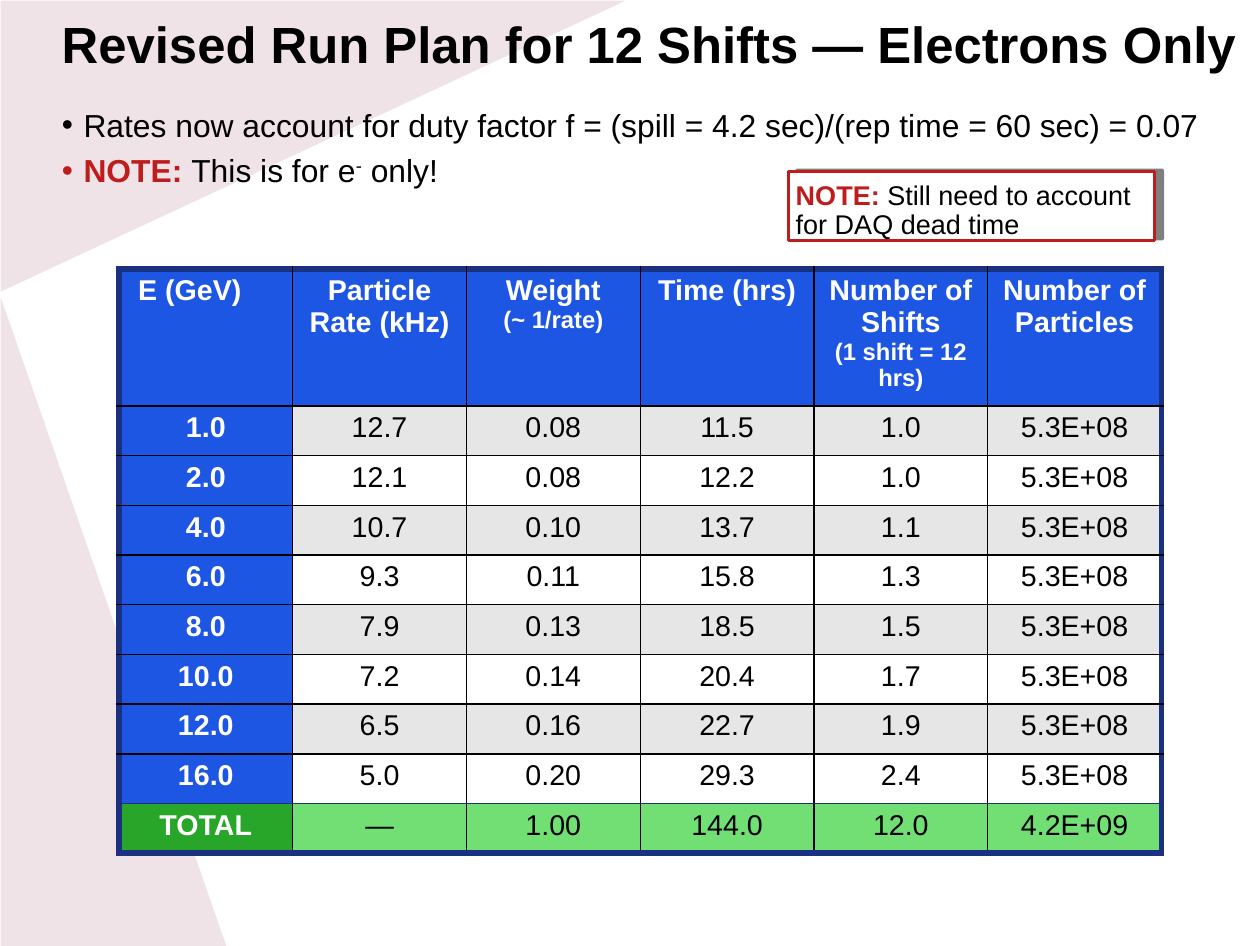
from lxml import etree
from pptx import Presentation
from pptx.dml.color import RGBColor
from pptx.enum.shapes import MSO_SHAPE
from pptx.enum.text import MSO_ANCHOR, PP_ALIGN
from pptx.oxml import parse_xml
from pptx.oxml.ns import nsdecls, qn
from pptx.util import Inches, Pt

COLORS = {
    "black": "000000", "white": "FFFFFF", "red": "BE1D1D", "mauve": "94476B",
    "blue": "1D56E3", "navy": "1A3080", "gray": "E6E6E6",
    "green": "27A629", "light green": "72DF74",
}


def add_run(p, text, size, color="black", bold=False):
    r = p.add_run()
    r.text = text
    r.font.name = "Arial"
    r.font.size = Pt(size)
    r.font.bold = bold
    r.font.color.rgb = RGBColor.from_string(COLORS[color])
    return r


def add_text_box(shapes, left, top, width, height):
    tf = shapes.add_textbox(Inches(left), Inches(top), Inches(width), Inches(height)).text_frame
    tf.word_wrap = True
    tf.margin_left = tf.margin_right = tf.margin_top = tf.margin_bottom = Inches(0.05)
    tf.paragraphs[0].line_spacing = 0.9
    return tf


prs = Presentation()
prs.slide_width, prs.slide_height = Inches(11.02), Inches(8.27)
s = prs.slides.add_slide(prs.slide_layouts[6])

# Translucent background triangles
for corners in ([(0, 2.56), (2, 8.31), (0, 8.31)], [(0, 2.56), (5.5, 0), (0, 0)]):
    points = [(Inches(x), Inches(y)) for x, y in corners]
    builder = s.shapes.build_freeform(*points[0])
    builder.add_line_segments(points[1:], close=True)
    sp = builder.convert_to_shape()
    sp.shadow.inherit = False
    sp.fill.solid()
    sp.fill.fore_color.rgb = RGBColor.from_string(COLORS["mauve"])
    fill_color = sp.fill._xPr.find(qn("a:solidFill"))[0]
    etree.SubElement(fill_color, qn("a:alpha"), val="15000")
    sp.line.color.rgb = RGBColor.from_string(COLORS["white"])
    sp.line.width = Pt(0.75)

# Title
tf = add_text_box(s.shapes, 0.49, 0.03, 12.34, 0.77)
tf.vertical_anchor = MSO_ANCHOR.MIDDLE
add_run(tf.paragraphs[0], "Revised Run Plan for 12 Shifts — Electrons Only", 32, bold=True)

# Bullets
tf = add_text_box(s.shapes, 0.49, 0.91, 10.31, 0.75)
rates, note = tf.paragraphs[0], tf.add_paragraph()
for p, color in ((rates, "black"), (note, "red")):
    p.line_spacing = 0.9
    p.space_before = Pt(7)
    pPr = p._p.get_or_add_pPr()
    pPr.set("marL", str(Inches(0.19)))
    pPr.set("indent", str(-Inches(0.19)))
    bullet_color = etree.SubElement(pPr, qn("a:buClr"))
    etree.SubElement(bullet_color, qn("a:srgbClr"), val=COLORS[color])
    etree.SubElement(pPr, qn("a:buFont"), typeface="Arial")
    etree.SubElement(pPr, qn("a:buChar"), char="•")
add_run(rates, "Rates now account for duty factor f = (spill = 4.2 sec)/(rep time = 60 sec) = 0.07", 20)
add_run(note, "NOTE: ", 20, "red", True)
add_run(note, "This is for e", 20)
add_run(note, "-", 20).font._element.set("baseline", "31000")
add_run(note, " only!", 20)

# Run plan table: each header cell is a list of lines, the second one smaller
header = [["E (GeV)"], ["Particle Rate (kHz)"], ["Weight", "(~ 1/rate)"], ["Time (hrs)"],
          ["Number of Shifts", "(1 shift = 12 hrs)"], ["Number of Particles"]]
body = [
    ("1.0", "12.7", "0.08", "11.5", "1.0", "5.3E+08"),
    ("2.0", "12.1", "0.08", "12.2", "1.0", "5.3E+08"),
    ("4.0", "10.7", "0.10", "13.7", "1.1", "5.3E+08"),
    ("6.0", "9.3", "0.11", "15.8", "1.3", "5.3E+08"),
    ("8.0", "7.9", "0.13", "18.5", "1.5", "5.3E+08"),
    ("10.0", "7.2", "0.14", "20.4", "1.7", "5.3E+08"),
    ("12.0", "6.5", "0.16", "22.7", "1.9", "5.3E+08"),
    ("16.0", "5.0", "0.20", "29.3", "2.4", "5.3E+08"),
    ("TOTAL", "—", "1.00", "144.0", "12.0", "4.2E+09"),
]
rows = [header] + [[[value] for value in row] for row in body]
n_rows, n_cols = len(rows), len(header)
last_row, last_col = n_rows - 1, n_cols - 1
table = s.shapes.add_table(n_rows, n_cols, Inches(1.04), Inches(2.35),
                           Inches(9.12), Inches(5.04)).table
table.first_row = table.horz_banding = False
for col in table.columns:
    col.width = Inches(1.52)
for i, row in enumerate(table.rows):
    row.height = Inches(1.13) if i == 0 else Inches(3.91 / len(body))

for i, row in enumerate(rows):
    for j, lines in enumerate(row):
        cell = table.cell(i, j)
        is_head = i == 0 or j == 0

        # Borders: thick navy frame, thin black grid, thin navy above the total
        tcPr = cell._tc.get_or_add_tcPr()
        for side, outer, above_total in (
            ("L", j == 0, False), ("R", j == last_col, False),
            ("T", i == 0, i == last_row), ("B", i == last_row, i == last_row - 1),
        ):
            color = COLORS["navy" if outer or above_total else "black"]
            width = Pt(3.97 if outer else 0.96)
            ln = etree.SubElement(tcPr, qn(f"a:ln{side}"), w=str(width))
            solid = etree.SubElement(ln, qn("a:solidFill"))
            etree.SubElement(solid, qn("a:srgbClr"), val=color)

        # Fill
        if i == last_row:
            fill = "green" if is_head else "light green"
        elif is_head:
            fill = "blue"
        else:
            fill = "gray" if i % 2 else "white"
        cell.fill.solid()
        cell.fill.fore_color.rgb = RGBColor.from_string(COLORS[fill])

        # Text
        tf = cell.text_frame
        for k, line in enumerate(lines):
            p = tf.add_paragraph() if k else tf.paragraphs[0]
            p.alignment = PP_ALIGN.CENTER
            add_run(p, line, 15 if k else 18, "white" if is_head else "black", is_head)
table.cell(0, 0).margin_right = Inches(0.38)

# Dead time note with a hard shadow
group = s.shapes.add_group_shape()
sp = group.shapes.add_shape(MSO_SHAPE.RECTANGLE, Inches(6.9), Inches(1.5), Inches(3.2), Inches(0.6))
sp.fill.solid()
sp.fill.fore_color.rgb = RGBColor.from_string(COLORS["white"])
sp.line.color.rgb = RGBColor.from_string(COLORS["red"])
sp.line.width = Pt(2)
sp._element.spPr.append(parse_xml(
    f'<a:effectLst {nsdecls("a")}><a:outerShdw blurRad="0" dist="{Pt(5)}" dir="{350 * 60000}" '
    f'algn="ctr" rotWithShape="0"><a:srgbClr val="{COLORS["black"]}"><a:alpha val="50000"/>'
    '</a:srgbClr></a:outerShdw></a:effectLst>'))
p = add_text_box(group.shapes, 6.91, 1.54, 3.17, 0.53).paragraphs[0]
p.space_before = Pt(7)
add_run(p, "NOTE:", 17, "red", True)
add_run(p, " Still need to account for DAQ dead time", 17)

prs.save("out.pptx")
